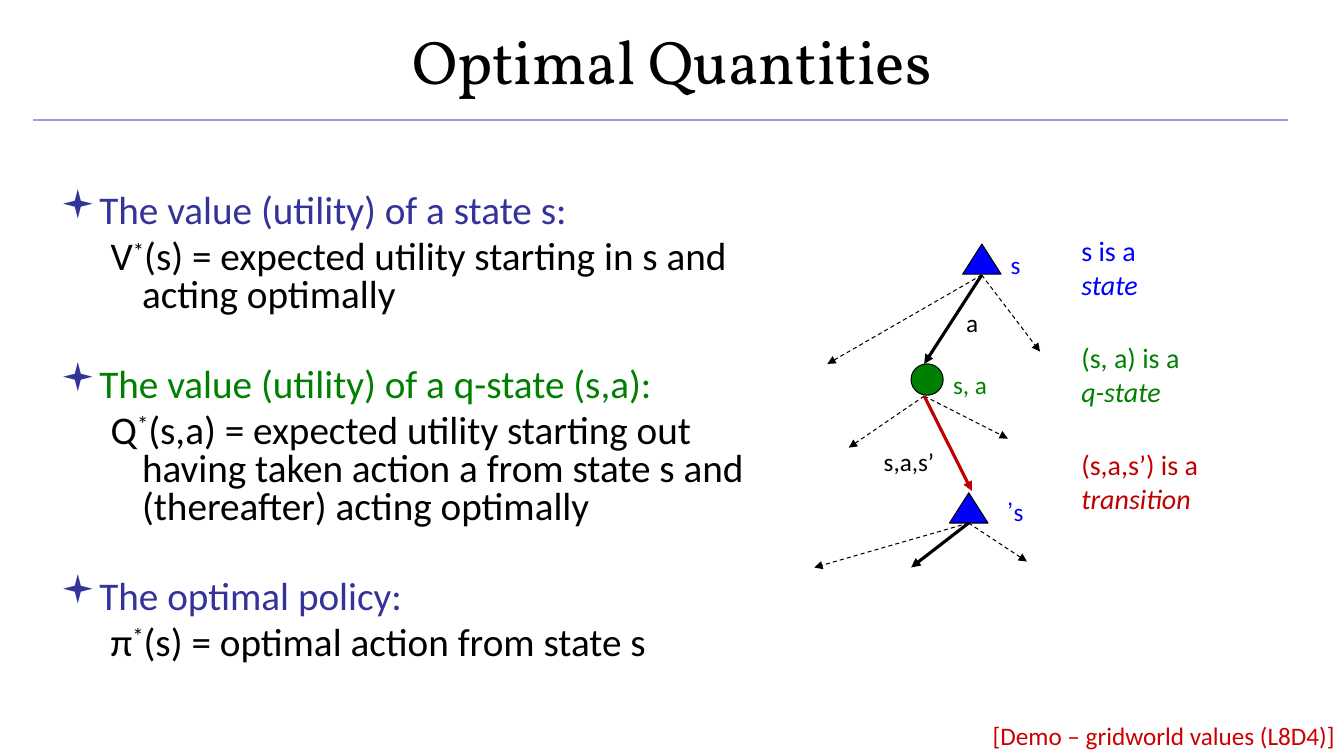
import dataclasses

import lxml.etree
import pptx
import pptx.dml.color
import pptx.enum.dml
import pptx.enum.shapes
import pptx.enum.text
import pptx.oxml
import pptx.oxml.ns
import pptx.util

Cm = pptx.util.Cm
Pt = pptx.util.Pt
qn = pptx.oxml.ns.qn
Shape = pptx.enum.shapes.MSO_SHAPE
Align = pptx.enum.text.PP_ALIGN


@dataclasses.dataclass(frozen=True)
class Theme:
    title_font: str = "Vollkorn"
    font: str = "Calibri"
    title_size: float = 44
    body_size: float = 28
    legend_size: float = 20
    label_size: float = 18
    black: str = "000000"
    rule: str = "9C9CDF"
    heading: str = "333399"
    state: str = "0000FF"
    q_state: str = "008000"
    transition: str = "C00000"
    demo: str = "CC0000"


class Slide:
    def __init__(self, page, theme):
        self.page = page
        self.theme = theme

    def color(self, name):
        return pptx.dml.color.RGBColor.from_string(name)

    def span(self, para, text, size, color, font=None, italic=False, superscript=False):
        span = para.add_run()
        span.text = text
        span.font.name = font or self.theme.font
        span.font.size = Pt(size)
        span.font.color.rgb = self.color(color)
        if italic:
            span.font.italic = True
        if superscript:
            span.font._element.set("baseline", "30000")

    def box(self, left, top, width, height):
        box = self.page.shapes.add_textbox(Cm(left), Cm(top), Cm(width), Cm(height))
        box.text_frame.word_wrap = True
        return box.text_frame

    def title(self, text):
        frame = self.box(0, -0.08, 33.87, 3.18)
        frame.vertical_anchor = pptx.enum.text.MSO_ANCHOR.MIDDLE
        para = frame.paragraphs[0]
        para.alignment = Align.CENTER
        self.span(para, text, self.theme.title_size, self.theme.black, self.theme.title_font)

    def label(self, text, left, top, width, color, align=Align.LEFT, rtl=False):
        para = self.box(left, top, width, 1.02).paragraphs[0]
        para.alignment = align
        if rtl:
            para._p.get_or_add_pPr().set("rtl", "1")
        self.span(para, text, self.theme.label_size, color)

    def legend(self, subject, kind, top, color):
        para = self.box(27, top, 6.02, 1.96).paragraphs[0]
        self.span(para, subject, self.theme.legend_size, color)
        para.add_line_break()
        self.span(para, kind, self.theme.legend_size, color, italic=True)

    def indent(self, para, margin, hanging):
        props = para._p.get_or_add_pPr()
        props.set("marL", str(Cm(margin)))
        props.set("indent", str(-Cm(hanging)))
        para.line_spacing = 0.8
        return props

    def bullet(self, props):
        color = lxml.etree.SubElement(props, qn("a:buClr"))
        lxml.etree.SubElement(color, qn("a:srgbClr"), val=self.theme.heading)
        lxml.etree.SubElement(props, qn("a:buFont"), typeface="Wingdings")
        lxml.etree.SubElement(props, qn("a:buChar"), char="▪")

    def definitions(self, entries):
        frame = self.box(1.27, 4.78, 18.62, 12.6)
        size = self.theme.body_size
        for index, (heading, color, symbol, meaning) in enumerate(entries):
            para = frame.add_paragraph() if index else frame.paragraphs[0]
            props = self.indent(para, 0.94, 0.94)
            para.space_before = Pt(37.5 if index else 0)
            self.bullet(props)
            self.span(para, heading, size, color)

            para = frame.add_paragraph()
            self.indent(para, 2.06, 0.79)
            para.space_before = Pt(6)
            self.span(para, symbol, size, self.theme.black)
            self.span(para, "*", size, self.theme.black, superscript=True)
            self.span(para, meaning, size, self.theme.black)

    def node(self, kind, left, top, width, height, color):
        node = self.page.shapes.add_shape(kind, Cm(left), Cm(top), Cm(width), Cm(height))
        node.shadow.inherit = False
        node.fill.solid()
        node.fill.fore_color.rgb = self.color(color)
        node.line.color.rgb = self.color(self.theme.black)
        node.line.width = Pt(0.75)

    def line(self, start, end, color, width):
        line = self.page.shapes.add_connector(
            pptx.enum.shapes.MSO_CONNECTOR.STRAIGHT, *map(Cm, start + end))
        line.line.color.rgb = self.color(color)
        line.line.width = Pt(width)
        lxml.etree.SubElement(line._element.spPr, qn("a:effectLst"))
        return line

    def arrow(self, start, end, color=None):
        arrow = self.line(start, end, color or self.theme.black, 2.25 if color else 0.75)
        if not color:
            arrow.line.dash_style = pptx.enum.dml.MSO_LINE.DASH
        lxml.etree.SubElement(arrow.line._get_or_add_ln(), qn("a:tailEnd"), type="triangle")


def main():
    deck = pptx.Presentation()
    deck.slide_width, deck.slide_height = Cm(33.87), Cm(19.05)
    theme = Theme()
    slide = Slide(deck.slides.add_slide(deck.slide_layouts[6]), theme)

    slide.line((0.84, 3.02), (32.46, 3.02), theme.rule, 1)
    slide.title("Optimal Quantities")
    slide.definitions([
        ("The value (utility) of a state s:", theme.heading, "V",
         "(s) = expected utility starting in s and acting optimally"),
        ("The value (utility) of a q-state (s,a):", theme.q_state, "Q",
         "(s,a) = expected utility starting out having taken action a from state s "
         "and (thereafter) acting optimally"),
        ("The optimal policy:", theme.heading, "π", "(s) = optimal action from state s"),
    ])

    for left, top in [(24.26, 6.15), (23.93, 12.42)]:
        slide.node(Shape.ISOSCELES_TRIANGLE, left, top, 0.97, 0.76, theme.state)
    slide.node(Shape.OVAL, 22.96, 9.17, 0.81, 0.79, theme.q_state)

    branches = [
        ((24.74, 6.93), (23.29, 9.17), theme.black, [(20.85, 9.17), (26.21, 8.86)]),
        ((23.29, 9.98), (24.49, 12.37), theme.transition, [(21.39, 11.28), (25.4, 11.05)]),
        ((24.41, 13.18), (22.96, 14.3), theme.black, [(20.52, 14.3), (25.88, 14.15)]),
    ]
    for start, chosen, color, others in branches:
        for end in others:
            slide.arrow(start, end)
        slide.arrow(start, chosen, color)

    slide.label("a", 24.1, 7.62, 0.81, theme.black)
    slide.label("s", 25.22, 6.15, 0.81, theme.state)
    slide.label("s’", 24.97, 12.37, 1.07, theme.state, Align.RIGHT, rtl=True)
    slide.label("s, a", 23.77, 9.17, 1.63, theme.q_state)
    slide.label("s,a,s’", 22.02, 11.13, 2.29, theme.black)
    slide.label("[Demo – gridworld values (L8D4)]", 16.31, 18.03, 17.58, theme.demo, Align.RIGHT)

    legends = [
        ("s is a ", "state", theme.state),
        ("(s, a) is a ", "q-state", theme.q_state),
        ("(s,a,s’) is a ", "transition", theme.transition),
    ]
    for index, (subject, kind, color) in enumerate(legends):
        slide.legend(subject, kind, 5.77 + 2.69 * index, color)

    deck.save("out.pptx")


if __name__ == "__main__":
    main()
